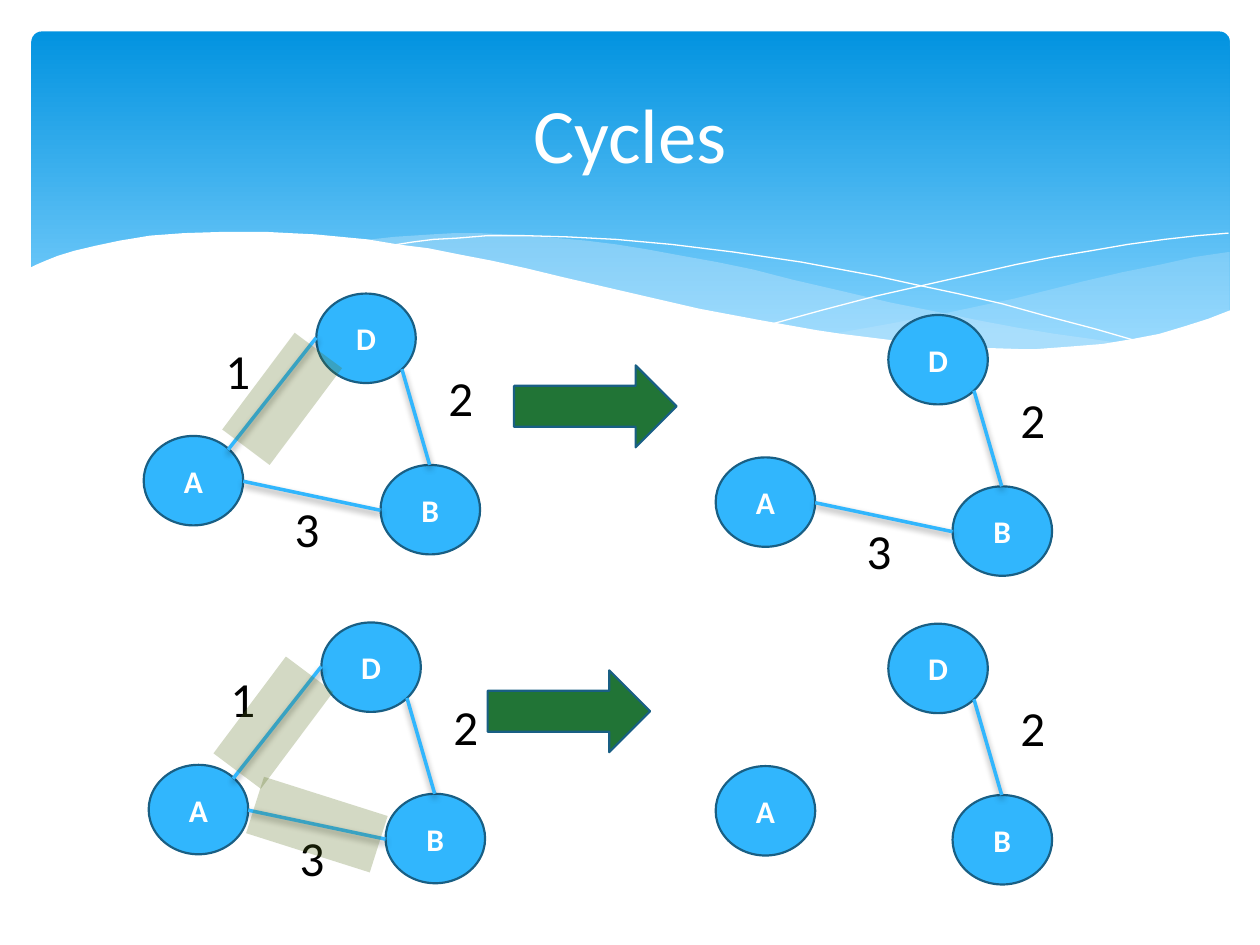
from lxml import etree
from pptx import Presentation
from pptx import util as u
from pptx.dml import color
from pptx.enum import shapes, text
from pptx.oxml import ns

PX = u.Inches(1) // 100
FONT = "Calibri"
BLUE, EDGE, GREEN, OLIVE = "31B6FD", "195F84", "217436", "526814"
WHITE, BLACK, PALE = "FFFFFF", "000000", "C6E7FC"

WAVE_RIGHT = [
    (975, 200), (948, 204), (921, 210), (891, 216), (861, 223), (805, 237),
    (753, 248), (706, 257), (661, 265), (691, 269), (719, 272), (745, 275),
    (769, 277), (803, 278), (835, 277), (863, 275), (889, 272), (913, 267),
    (935, 262), (949, 257), (963, 252), (976, 247), (976, 200)]
WAVE_MIDDLE = [
    (893, 273), (866, 269), (837, 265), (807, 260), (775, 254), (741, 247),
    (706, 240), (668, 231), (629, 222), (598, 214), (569, 208), (541, 203),
    (514, 198), (489, 194), (465, 191), (442, 189), (420, 187), (399, 186),
    (380, 185), (361, 185), (344, 186), (313, 188), (286, 191), (323, 196),
    (362, 203), (404, 211), (449, 222), (491, 232), (530, 240), (566, 248),
    (601, 255), (634, 261), (665, 266), (695, 270), (722, 274), (748, 276),
    (773, 277), (796, 278), (828, 278), (857, 277), (876, 275)]
CURVE_DOWN = [
    (309, 195), (328, 192), (344, 190), (363, 189), (387, 187), (416, 187),
    (450, 188), (489, 190), (533, 194), (582, 200), (636, 208), (695, 219),
    (727, 226), (760, 233), (795, 241), (831, 251), (869, 261), (907, 272)]
CURVE_UP = [
    (613, 257), (653, 246), (695, 235), (748, 223), (806, 210), (836, 204),
    (866, 199), (895, 194), (924, 190), (951, 187), (975, 185)]
WAVE_WHITE = [
    (977, 246), (959, 253), (940, 259), (920, 265), (899, 269), (875, 273),
    (850, 275), (823, 277), (809, 277), (778, 276), (744, 274), (708, 270),
    (668, 265), (648, 262), (603, 254), (555, 245), (503, 233), (447, 220),
    (418, 213), (391, 207), (365, 202), (340, 197), (316, 194), (292, 190),
    (271, 188), (250, 186), (230, 185), (211, 184), (177, 184), (146, 185),
    (119, 187), (95, 191), (76, 195), (59, 199), (46, 203), (36, 207),
    (29, 210), (23, 213), (23, 329), (977, 329)]

NODES = {"D": (137, 0), "A": (0, 113), "B": (188, 136)}
EDGES = {
    1: ((67, 124), (137, 35), (55, 32), 34),
    3: ((79, 149), (188, 172), (110, 158), 39),
    2: ((227, 136), (205, 60), (232, 54), 38)}


def px(*values):
    return [v * PX for v in values]


def rgb(value):
    return color.RGBColor.from_string(value)


def paint(sp, fill=None, line=None, width=1.25, alpha=None):
    sp.shadow.inherit = False
    if fill:
        sp.fill.solid()
        sp.fill.fore_color.rgb = rgb(fill)
    else:
        sp.fill.background()
    if alpha:
        clr = sp.element.spPr.find(ns.qn("a:solidFill"))[0]
        etree.SubElement(clr, ns.qn("a:alpha"), val=str(alpha * 1000))
    if line:
        sp.line.color.rgb = rgb(line)
        sp.line.width = u.Pt(width)
    else:
        sp.line.fill.background()


def write(sp, words, size, colour, align, bold=False):
    tf = sp.text_frame
    tf.text = words
    p = tf.paragraphs[0]
    p.alignment = align
    f = p.runs[0].font
    f.name, f.size, f.bold = FONT, u.Pt(size), bold
    f.color.rgb = rgb(colour)


def add_shape(s, kind, x, y, w, h, **style):
    sp = s.shapes.add_shape(kind, *px(x, y, w, h))
    paint(sp, **style)
    return sp


def add_outline(s, x, y, points, closed=True, **style):
    fb = s.shapes.build_freeform(*points[0], scale=PX)
    fb.add_line_segments(points[1:], close=closed)
    paint(fb.convert_to_shape(*px(x, y)), **style)


def add_banner(s, x, y):
    sp = add_shape(s, shapes.MSO_SHAPE.ROUNDED_RECTANGLE, x + 25, y + 25, 951, 270)
    sp.adjustments[0] = 0.03
    sp.fill.gradient()
    sp.fill.gradient_angle = 270
    for stop, (pos, c) in zip(sp.fill.gradient_stops, [(0, "0293E0"), (0.9, "83D3FE")]):
        stop.position, stop.color.rgb = pos, rgb(c)
    add_outline(s, x, y, WAVE_RIGHT, fill=PALE, alpha=29)
    add_outline(s, x, y, WAVE_MIDDLE, fill=PALE, alpha=40)
    for curve in (CURVE_DOWN, CURVE_UP):
        add_outline(s, x, y, curve, closed=False, line=WHITE, width=0)
    add_outline(s, x, y, WAVE_WHITE, fill=WHITE)


def add_title(s, x, y, w, h):
    sp = s.shapes.title
    sp.left, sp.top, sp.width, sp.height = px(x, y, w, h)
    write(sp, "Cycles", 44, WHITE, text.PP_ALIGN.CENTER)
    sp.text_frame.vertical_anchor = text.MSO_ANCHOR.MIDDLE
    sp.element.getparent().append(sp.element)


def add_edge(s, x, y, start, end):
    c = s.shapes.add_connector(
        shapes.MSO_CONNECTOR.STRAIGHT,
        *px(x + start[0], y + start[1], x + end[0], y + end[1]))
    c.line.color.rgb = rgb(BLUE)
    c.line.width = u.Pt(2)
    effects = etree.SubElement(c.element.spPr, ns.qn("a:effectLst"))
    shadow = etree.SubElement(
        effects, ns.qn("a:outerShdw"), blurRad=str(u.Pt(4)), dist=str(u.Pt(2)),
        dir="5400000", rotWithShape="0")
    clr = etree.SubElement(shadow, ns.qn("a:srgbClr"), val=BLACK)
    etree.SubElement(clr, ns.qn("a:alpha"), val="38000")


def add_graph(s, x, y, weights):
    for name, (dx, dy) in NODES.items():
        sp = add_shape(s, shapes.MSO_SHAPE.OVAL, x + dx, y + dy, 79, 71,
                       fill=BLUE, line=EDGE)
        write(sp, name, 18, WHITE, text.PP_ALIGN.CENTER, bold=True)
        sp.text_frame.vertical_anchor = text.MSO_ANCHOR.MIDDLE
    for weight in weights:
        start, end, (dx, dy), w = EDGES[weight]
        add_edge(s, x, y, start, end)
        sp = s.shapes.add_textbox(*px(x + dx, y + dy, w, 57))
        write(sp, str(weight), 28, BLACK, text.PP_ALIGN.LEFT)
        sp.text_frame.word_wrap = False
        sp.text_frame.auto_size = text.MSO_AUTO_SIZE.SHAPE_TO_FIT_TEXT


def add_highlight(s, x, y, w, angle):
    sp = add_shape(s, shapes.MSO_SHAPE.RECTANGLE, x, y, w, 47, fill=OLIVE, alpha=25)
    sp.rotation = angle


def add_arrow(s, x, y):
    add_shape(s, shapes.MSO_SHAPE.RIGHT_ARROW, x, y, 129, 65, fill=GREEN, line=EDGE)


def main():
    prs = Presentation()
    prs.slide_width, prs.slide_height = px(1000, 750)
    s = prs.slides.add_slide(prs.slide_layouts[5])
    add_banner(s, 0, 0)
    add_graph(s, 114, 233, (1, 3, 2))
    add_graph(s, 568, 250, (3, 2))
    add_graph(s, 118, 494, (1, 3, 2))
    add_graph(s, 568, 495, (2,))
    add_highlight(s, 176, 293, 96, 306.8)
    add_highlight(s, 200, 631, 103, 17.6)
    add_highlight(s, 169, 550, 96, 306.8)
    add_title(s, 50, 37, 900, 137)
    add_arrow(s, 408, 290)
    add_arrow(s, 387, 532)
    prs.save("out.pptx")


if __name__ == "__main__":
    main()
